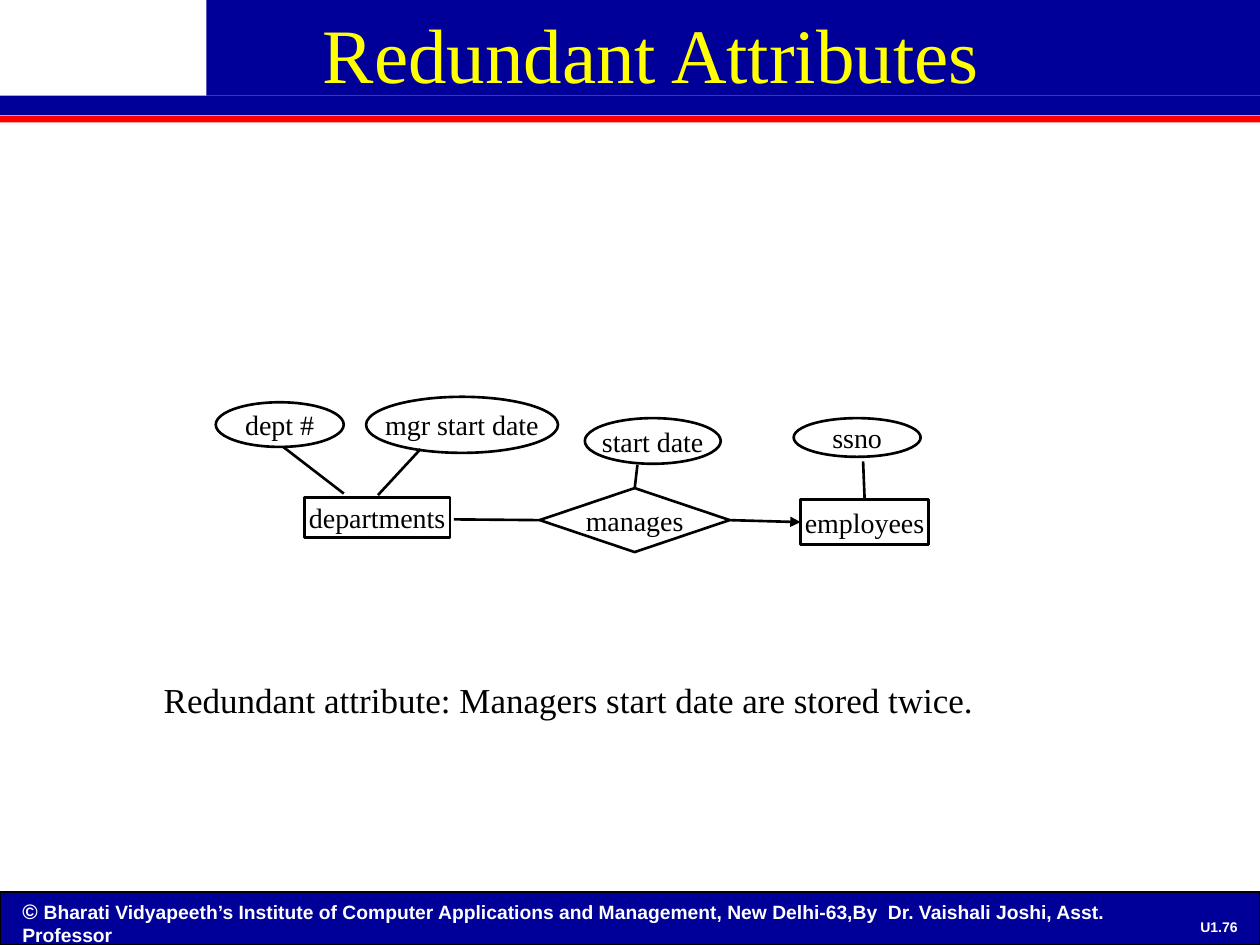
from lxml import etree
from pptx import Presentation
from pptx.dml.color import RGBColor
from pptx.enum.shapes import MSO_CONNECTOR as Link, MSO_SHAPE as Form
from pptx.enum.text import MSO_ANCHOR as Anchor, MSO_AUTO_SIZE as AutoSize, PP_ALIGN as Align
from pptx.oxml.ns import qn
from pptx.util import Cm, Pt

NAVY = RGBColor(0x00, 0x00, 0x99)
RED = RGBColor(0xFF, 0x00, 0x00)
YELLOW = RGBColor(0xFF, 0xFF, 0x00)
WHITE = RGBColor(0xFF, 0xFF, 0xFF)
BLACK = RGBColor(0x00, 0x00, 0x00)
SERIF = "Times New Roman"
SANS = "Arial"
TOP, LEFT, BOTTOM, RIGHT = range(4)


def add_span(para, text, size, color, font=SERIF, bold=False):
    span = para.add_run()
    span.text = text
    span.font.size = Pt(size)
    span.font.name = font
    span.font.bold = bold
    span.font.color.rgb = color


def add_bar(page, left, top, width, height, color):
    bar = page.shapes.add_shape(Form.RECTANGLE, Cm(left), Cm(top), Cm(width), Cm(height))
    bar.shadow.inherit = False
    bar.fill.solid()
    bar.fill.fore_color.rgb = color
    bar.line.fill.background()
    return bar


def add_text(page, left, top, width, height, spans, align=Align.LEFT, **style):
    box = page.shapes.add_textbox(Cm(left), Cm(top), Cm(width), Cm(height))
    box.text_frame.word_wrap = True
    para = box.text_frame.paragraphs[0]
    para.alignment = align
    for text, size in spans:
        add_span(para, text, size, **style)
    return para


def add_node(page, form, text, left, top, width, height):
    node = page.shapes.add_shape(form, Cm(left), Cm(top), Cm(width), Cm(height))
    node.shadow.inherit = False
    node.fill.background()
    node.line.color.rgb = BLACK
    node.line.width = Pt(1.5)
    frame = node.text_frame
    frame.word_wrap = False
    frame.vertical_anchor = Anchor.MIDDLE
    para = frame.paragraphs[0]
    para.alignment = Align.CENTER
    add_span(para, text, 16, BLACK)
    return node


def add_link(page, start, end, begin_at=None, end_at=None, arrow=False):
    points = [Cm(value) for value in (*start, *end)]
    link = page.shapes.add_connector(Link.STRAIGHT, *points)
    if begin_at:
        link.begin_connect(*begin_at)
    if end_at:
        link.end_connect(*end_at)
    link.line.color.rgb = BLACK
    link.line.width = Pt(1.5)
    if arrow:
        etree.SubElement(link.line._get_or_add_ln(), qn("a:tailEnd"), type="triangle")
    etree.SubElement(link._element.spPr, qn("a:effectLst"))


def add_title(page, text):
    title = page.shapes.title
    title.left, title.top, title.width, title.height = Cm(1.7), Cm(0), Cm(22.86), Cm(3.18)
    frame = title.text_frame
    frame.auto_size = AutoSize.NONE
    frame.word_wrap = True
    frame.vertical_anchor = Anchor.TOP
    para = frame.paragraphs[0]
    para.alignment = Align.CENTER
    add_span(para, text, 44, YELLOW)
    page.shapes._spTree.append(title._element)


def add_frame(page):
    add_bar(page, 0, 2.34, 25.4, 0.13, RED)
    add_bar(page, 4.16, 0, 21.24, 1.93, NAVY)
    add_bar(page, 0, 1.93, 25.4, 0.4, NAVY)
    footer = add_bar(page, 0, 17.98, 25.4, 1.07, NAVY)
    footer.line.color.rgb = BLACK
    footer.line.width = Pt(0.75)
    style = dict(color=WHITE, font=SANS, bold=True)
    credit = ("Bharati Vidyapeeth’s Institute of Computer Applications and Management, "
              "New Delhi-63,By  Dr. Vaishali Joshi, Asst. Professor")
    add_text(page, 0.2, 17.98, 24.08, 1.07, [("© ", 12), (credit, 11)], **style)
    add_text(page, 23.8, 18.4, 1.55, 0.6, [("U1.76", 8)], Align.CENTER, **style)


def add_diagram(page):
    departments = add_node(page, Form.RECTANGLE, "departments", 6.14, 10.03, 2.93, 0.81)
    employees = add_node(page, Form.RECTANGLE, "employees", 16.14, 10.07, 2.58, 0.91)
    manages = add_node(page, Form.DIAMOND, "manages", 10.88, 9.84, 3.83, 1.29)
    for text, *place in (
        ("mgr start date", 7.38, 8, 3.87, 1.13),
        ("dept #", 4.35, 8.11, 2.58, 0.9),
        ("start date", 11.79, 8.43, 2.74, 0.92),
        ("ssno", 16, 8.43, 2.56, 0.78),
    ):
        add_node(page, Form.OVAL, text, *place)
    add_link(page, (9.15, 10.47), (10.88, 10.49), end_at=(manages, LEFT))
    add_link(page, (14.71, 10.49), (16.14, 10.53), (manages, RIGHT), (employees, LEFT), arrow=True)
    add_link(page, (5.71, 9.01), (6.93, 9.95))
    add_link(page, (8.48, 9.05), (7.62, 9.98))
    add_link(page, (12.85, 9.37), (12.8, 9.84), end_at=(manages, TOP))
    add_link(page, (17.4, 9.3), (17.43, 10.07), end_at=(employees, TOP))


def main():
    deck = Presentation()
    deck.slide_width, deck.slide_height = Cm(25.4), Cm(19.05)
    page = deck.slides.add_slide(deck.slide_layouts[5])
    add_frame(page)
    add_title(page, "Redundant Attributes")
    add_diagram(page)
    remark = "Redundant attribute: Managers start date are stored twice."
    para = add_text(page, 3.05, 13.64, 18.34, 1.09, [(remark, 20)], color=BLACK)
    para.line_spacing = 0.9
    deck.save("out.pptx")


if __name__ == "__main__":
    main()
